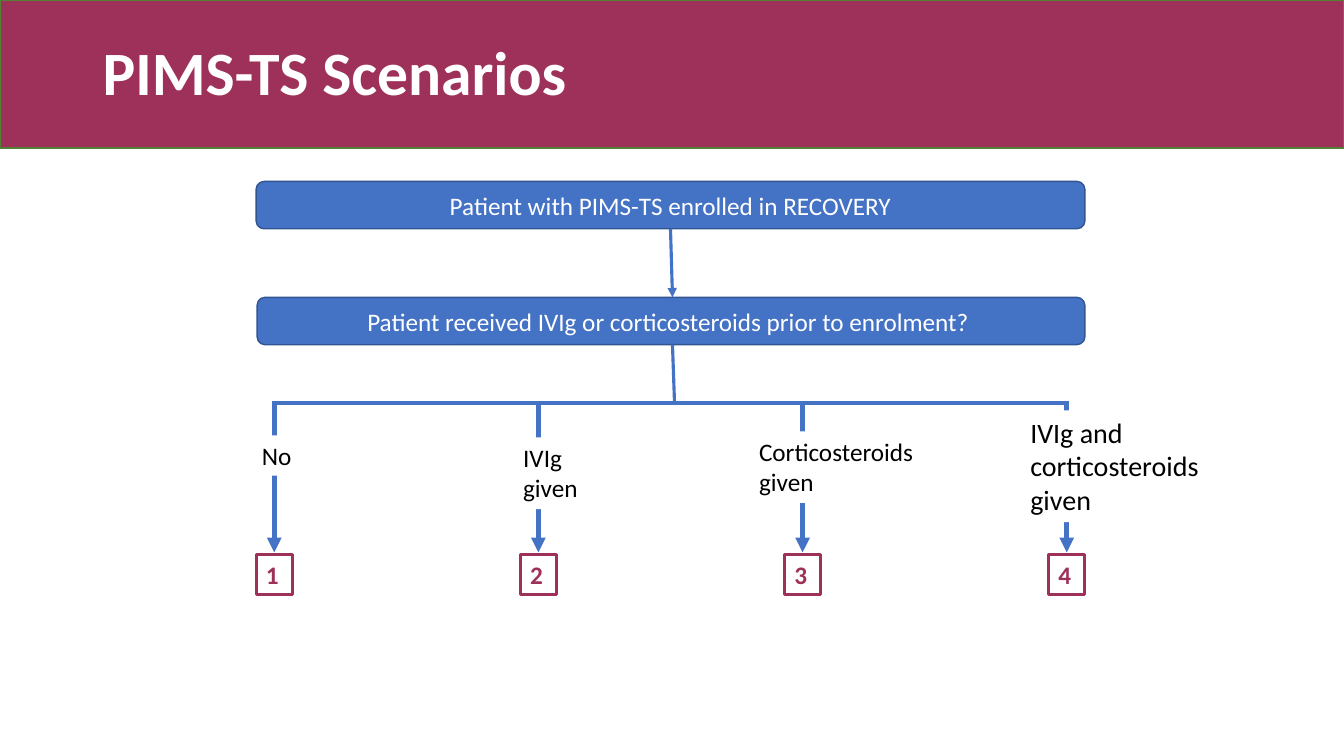
from lxml import etree
from pptx import Presentation
from pptx.dml.color import RGBColor
from pptx.enum.shapes import MSO_CONNECTOR, MSO_SHAPE
from pptx.enum.text import MSO_ANCHOR, PP_ALIGN
from pptx.oxml.ns import qn
from pptx.util import Inches, Pt

RECTANGLE = MSO_SHAPE.RECTANGLE
ROUNDED = MSO_SHAPE.ROUNDED_RECTANGLE
STRAIGHT = MSO_CONNECTOR.STRAIGHT
TOP, MIDDLE = MSO_ANCHOR.TOP, MSO_ANCHOR.MIDDLE
LEFT, CENTER = PP_ALIGN.LEFT, PP_ALIGN.CENTER

FONT = "Calibri"
PLUM, GREEN = "9E3159", "538035"
BLUE, NAVY = "4472C4", "325491"
WHITE, BLACK = "FFFFFF", "000000"

FIRST_BRANCH, BRANCH_STEP = 2.72, 2.62
BRANCHES = [
    ("No", (2.5, 4.32, 1.05, 0.4), 18),
    ("IVIg given", (5.09, 4.34, 1.05, 0.71), 18),
    ("Corticosteroids given", (7.43, 4.28, 1.92, 0.71), 18),
    ("IVIg and corticosteroids given", (10.12, 4.07, 2.29, 1.11), 20),
]


def color(value):
    """Turn a hex string into a colour."""
    return RGBColor.from_string(value)


def write(shape, text, size, text_color, bold=False, align=LEFT, anchor=TOP):
    """Put one wrapped paragraph of text into a shape."""
    frame = shape.text_frame
    frame.word_wrap = True
    frame.vertical_anchor = anchor
    paragraph = frame.paragraphs[0]
    paragraph.alignment = align
    run = paragraph.add_run()
    run.text = text
    run.font.name = FONT
    run.font.size = Pt(size)
    run.font.bold = bold
    run.font.color.rgb = color(text_color)
    return paragraph


def add_box(slide, bounds, fill, line=None, width=1, kind=RECTANGLE):
    """Add a filled box with an optional outline."""
    shape = slide.shapes.add_shape(kind, *map(Inches, bounds))
    shape.shadow.inherit = False
    shape.fill.solid()
    shape.fill.fore_color.rgb = color(fill)
    if line:
        shape.line.color.rgb = color(line)
        shape.line.width = Pt(width)
    else:
        shape.line.fill.background()
    return shape


def add_line(slide, start, end, width, arrow=False):
    """Add a straight blue line, optionally ending in an arrowhead."""
    connector = slide.shapes.add_connector(STRAIGHT, *map(Inches, start + end))
    connector.line.color.rgb = color(BLUE)
    connector.line.width = Pt(width)
    if arrow:
        line = connector.line._get_or_add_ln()
        etree.SubElement(line, qn("a:tailEnd"), type="triangle")
    etree.SubElement(connector._element.spPr, qn("a:effectLst"))


def add_header(slide, title):
    """Add the title band and its title."""
    add_box(slide, (0, 0, 13.33, 1.47), PLUM, GREEN)
    box = slide.shapes.add_textbox(*map(Inches, (0.92, 0.02, 11.5, 1.45)))
    paragraph = write(box, title, 44, WHITE, bold=True, anchor=MIDDLE)
    paragraph.line_spacing = 0.9


def add_step(slide, bounds, text):
    """Add a rounded flowchart step."""
    step = add_box(slide, bounds, BLUE, NAVY, kind=ROUNDED)
    write(step, text, 18, WHITE, align=CENTER, anchor=MIDDLE)


def add_branch(slide, number, label, bounds, size):
    """Add a numbered outcome, its arrow and the label over the arrow."""
    center = FIRST_BRANCH + (number - 1) * BRANCH_STEP
    outcome = add_box(slide, (center - 0.18, 5.5, 0.36, 0.4), WHITE, PLUM, 2.25)
    write(outcome, str(number), 18, PLUM, bold=True)
    add_line(slide, (center, 3.98), (center, 5.48), 3.5, arrow=True)
    write(add_box(slide, bounds, WHITE), label, size, BLACK)


def main():
    """Build the scenario flowchart and save it."""
    presentation = Presentation()
    presentation.slide_width = Inches(13.33)
    presentation.slide_height = Inches(7.5)
    slide = presentation.slides.add_slide(presentation.slide_layouts[6])

    add_header(slide, "PIMS-TS Scenarios")
    add_step(slide, (2.54, 1.8, 8.22, 0.47),
             "Patient with PIMS-TS enrolled in RECOVERY")
    add_step(slide, (2.55, 2.95, 8.21, 0.47),
             "Patient received IVIg or corticosteroids prior to enrolment? ")
    add_line(slide, (6.65, 2.27), (6.67, 2.95), 2.25, arrow=True)
    add_line(slide, (6.67, 3.42), (6.69, 3.99), 2.25)
    add_line(slide, (FIRST_BRANCH, 4), (10.59, 4), 3.25)
    for number, (label, bounds, size) in enumerate(BRANCHES, start=1):
        add_branch(slide, number, label, bounds, size)

    presentation.save("out.pptx")


if __name__ == "__main__":
    main()
